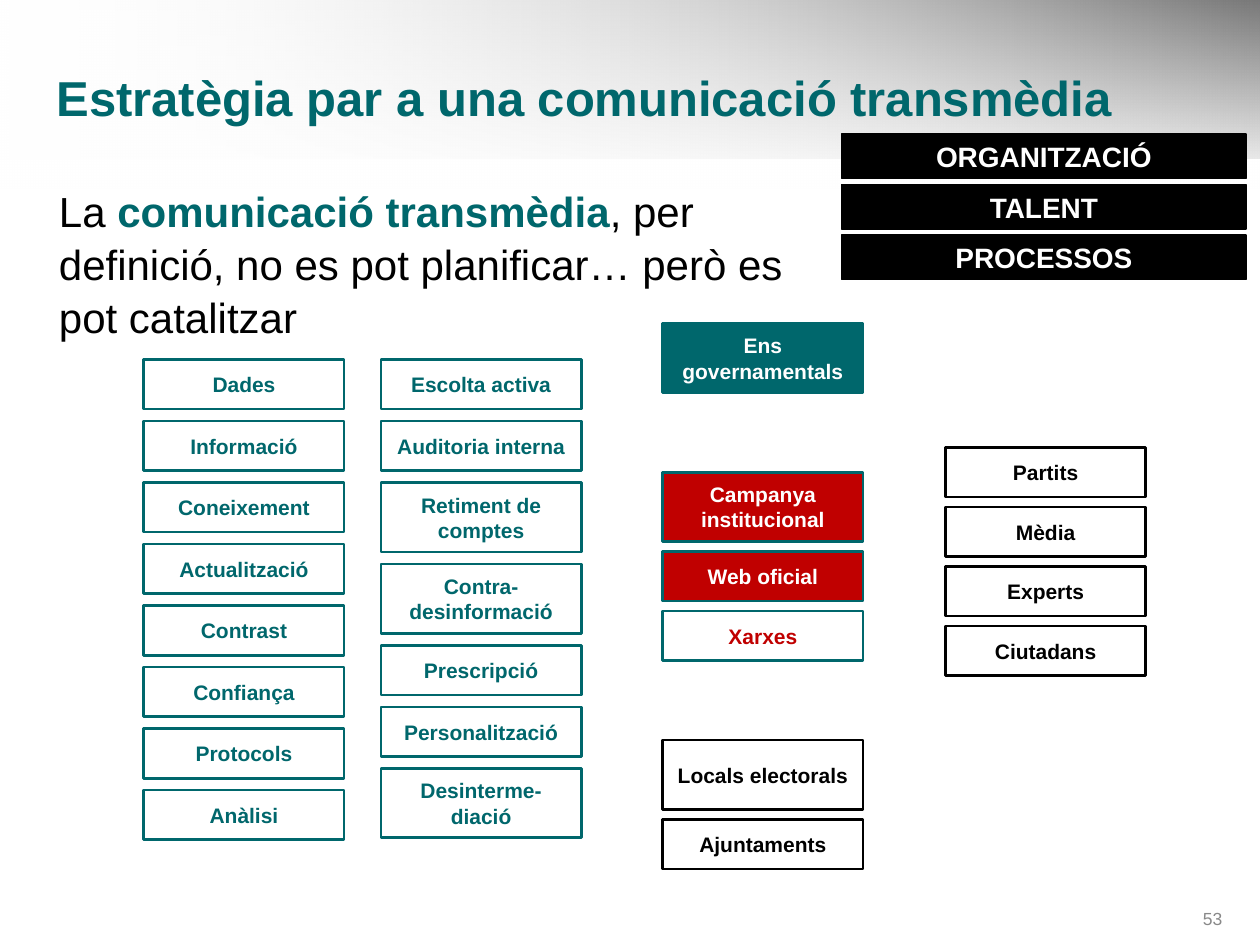
from lxml import etree
from pptx import Presentation
from pptx.dml.color import RGBColor
from pptx.enum.shapes import MSO_SHAPE
from pptx.enum.text import MSO_ANCHOR, PP_ALIGN
from pptx.oxml import parse_xml
from pptx.util import Cm, Pt

RECTANGLE = MSO_SHAPE.RECTANGLE
MIDDLE, TOP = MSO_ANCHOR.MIDDLE, MSO_ANCHOR.TOP
LEFT, CENTER, RIGHT = PP_ALIGN.LEFT, PP_ALIGN.CENTER, PP_ALIGN.RIGHT
FONT = "Arial"
TEAL, RED, BLACK, WHITE, GREY = "00676C", "C00000", "000000", "FFFFFF", "898989"
DRAWING_NS = "http://schemas.openxmlformats.org/drawingml/2006/main"

BOX_WIDTH, LOW, TALL = 4.04, 1.0, 1.4  # cm


def rgb(value):
    return RGBColor.from_string(value)


def set_font(font, size, color, bold=False):
    font.name, font.size, font.bold = FONT, Pt(size), bold
    font.color.rgb = rgb(color)


def add_rectangle(slide, left, top, width, height):
    rectangle = slide.shapes.add_shape(
        RECTANGLE, Cm(left), Cm(top), Cm(width), Cm(height))
    rectangle.shadow.inherit = False
    return rectangle


def add_fade(slide, width, height, stops, angle):
    """Gradient band at the top; stops are (position %, colour, opacity %)."""
    band = add_rectangle(slide, 0, 0, width, height)
    band.line.fill.background()
    band.fill.background()
    stop_xml = "".join(
        f'<a:gs pos="{position * 1000}"><a:srgbClr val="{color}">'
        f'<a:alpha val="{opacity * 1000}"/></a:srgbClr></a:gs>'
        for position, color, opacity in stops)
    gradient = parse_xml(
        f'<a:gradFill xmlns:a="{DRAWING_NS}" rotWithShape="1">'
        f'<a:gsLst>{stop_xml}</a:gsLst>'
        f'<a:lin ang="{angle * 60000}" scaled="0"/></a:gradFill>')
    properties = band.fill._xPr
    no_fill = properties.find(etree.QName(DRAWING_NS, "noFill"))
    properties.replace(no_fill, gradient)


def add_label(slide, left, top, width, height, label, size, color,
              fill=None, outline=BLACK, weight=1.5):
    box = add_rectangle(slide, left, top, width, height)
    if fill:
        box.fill.solid()
        box.fill.fore_color.rgb = rgb(fill)
    else:
        box.fill.background()
    box.line.color.rgb = rgb(outline)
    box.line.width = Pt(weight)
    box.text_frame.word_wrap = True
    box.text_frame.vertical_anchor = MIDDLE
    paragraph = box.text_frame.paragraphs[0]
    paragraph.text = label
    paragraph.alignment = CENTER
    set_font(paragraph.font, size, color, True)


def add_stack(slide, left, top, gap, entries, outline):
    """Column of boxes; entries are (label, height, text colour, fill)."""
    for label, height, color, fill in entries:
        add_label(slide, left, top, BOX_WIDTH, height, label, 12, color, fill, outline)
        top += height + gap


def add_text(slide, left, top, width, height, anchor=TOP, align=LEFT):
    frame = slide.shapes.add_textbox(
        Cm(left), Cm(top), Cm(width), Cm(height)).text_frame
    frame.word_wrap = True
    frame.vertical_anchor = anchor
    frame.paragraphs[0].alignment = align
    return frame.paragraphs[0]


def add_header(slide, width):
    add_fade(slide, width, 3.2, [(0, WHITE, 0), (100, BLACK, 100)], 0)
    add_fade(slide, width, 3.81, [(0, WHITE, 47), (100, WHITE, 100)], 90)
    title = add_text(slide, 0.89, 1.17, 23.39, 1.57, MIDDLE)
    title.text = "Estratègia par a una comunicació transmèdia"
    set_font(title.font, 28, TEAL, True)


def add_statement(slide, left, top, width, height):
    statement = add_text(slide, left, top, width, height)
    statement.line_spacing = 1.05
    for words, color, bold in [
            ("La ", BLACK, False),
            ("comunicació transmèdia", TEAL, True),
            (", per definició, no es pot planificar… però es pot catalitzar",
             BLACK, False)]:
        run = statement.add_run()
        run.text = words
        set_font(run.font, 24, color, bold)


def add_pillars(slide, left, top, width, height, gap):
    for row, pillar in enumerate(["ORGANITZACIÓ", "TALENT", "PROCESSOS"]):
        add_label(slide, left, top + row * (height + gap), width, height,
                  pillar, 16, WHITE, BLACK, BLACK, 0)


def add_capabilities(slide, left, top):
    knowledge = ["Dades", "Informació", "Coneixement", "Actualització",
                 "Contrast", "Confiança", "Protocols", "Anàlisi"]
    actions = [("Escolta activa", LOW), ("Auditoria interna", LOW),
               ("Retiment de comptes", TALL), ("Contra-desinformació", TALL),
               ("Prescripció", LOW), ("Personalització", LOW),
               ("Desinterme-diació", TALL)]
    columns = [[(label, LOW) for label in knowledge], actions]
    for index, column in enumerate(columns):
        entries = [(label, height, TEAL, None) for label, height in column]
        add_stack(slide, left + index * 4.78, top, 0.24, entries, TEAL)


def add_actors(slide, left, top):
    # Government bodies and their channels
    add_stack(slide, left, top, 0, [("Ens governamentals", TALL, WHITE, TEAL)], TEAL)
    add_stack(slide, left, top + 3.0, 0.2, [
        ("Campanya institucional", TALL, WHITE, RED),
        ("Web oficial", LOW, WHITE, RED),
        ("Xarxes", LOW, RED, None)], TEAL)
    # Local venues
    add_stack(slide, left, top + 8.4, 0.2, [
        ("Locals electorals", TALL, BLACK, None),
        ("Ajuntaments", LOW, BLACK, None)], BLACK)
    # Outside voices
    voices = ["Partits", "Mèdia", "Experts", "Ciutadans"]
    add_stack(slide, left + 5.7, top + 2.5, 0.2,
              [(voice, LOW, BLACK, None) for voice in voices], BLACK)


def add_page_number(slide, left, top, width, height):
    number = add_text(slide, left, top, width, height, MIDDLE, RIGHT)
    number.text = "53"
    set_font(number.font, 10, GREY)


def main():
    prs = Presentation()
    prs.slide_width, prs.slide_height = Cm(25.4), Cm(19.05)
    slide = prs.slides.add_slide(prs.slide_layouts[6])
    add_header(slide, 25.4)
    add_page_number(slide, 23.29, 18.14, 1.6, 0.74)
    add_statement(slide, 0.94, 3.56, 15.16, 14.38)
    add_actors(slide, 13.36, 6.52)
    add_capabilities(slide, 2.9, 7.25)
    add_pillars(slide, 16.97, 2.7, 8.15, 0.9, 0.12)
    prs.save("out.pptx")


if __name__ == "__main__":
    main()
